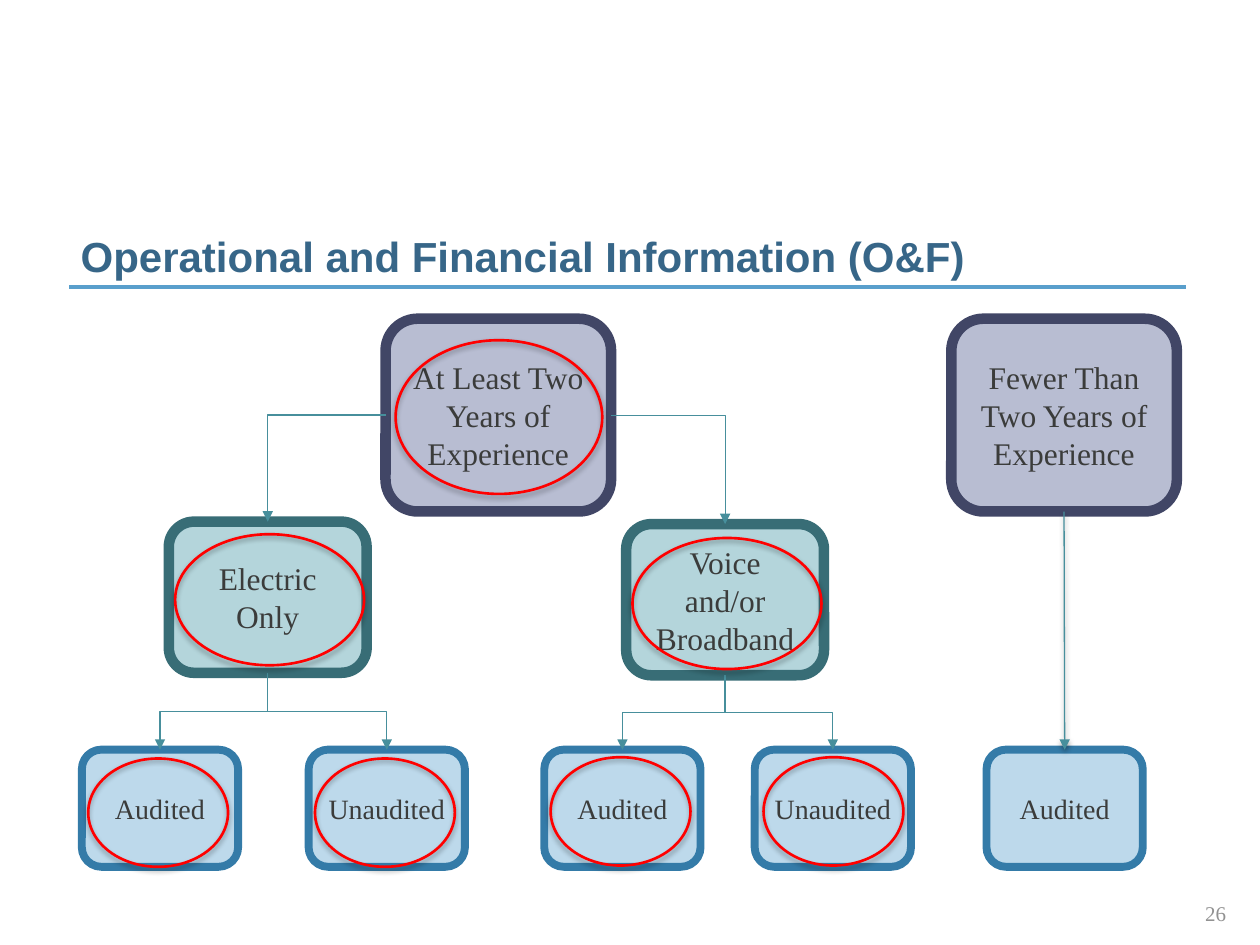
import pptx
import pptx.dml.color
import pptx.enum.shapes
import pptx.enum.text
import pptx.oxml
import pptx.oxml.ns
import pptx.util
from pptx.util import Inches

SHAPE = pptx.enum.shapes.MSO_SHAPE
CONNECTOR = pptx.enum.shapes.MSO_CONNECTOR
ALIGN = pptx.enum.text.PP_ALIGN
ANCHOR = pptx.enum.text.MSO_ANCHOR
TOP, LEFT, BOTTOM, RIGHT = range(4)
SERIF = "Times New Roman"

COLORS = {
    "title": "376688", "rule": "599FCC", "text": "3B3C3B", "number": "929292",
    "arrow": "478F9C", "highlight": "FF0000",
}
TITLE = "Operational and Financial Information (O&F)"
PAGE_NUMBER = "26"

LEVELS = {
    "experience": dict(size=(1.79, 1.53), oval=(1.64, 1.22), fill="B8BDD2",
                       border="414666", border_pt=6, font_pt=18),
    "service": dict(size=(1.57, 1.2), oval=(1.5, 1.04), fill="B4D5DB",
                    border="386D76", border_pt=6, font_pt=18),
    "audit": dict(size=(1.24, 0.93), oval=(1.11, 0.86), fill="BDD9EB",
                  border="347BA8", border_pt=4.5, font_pt=16),
}
# key: level, text, box left and top, highlight oval left and top
BOXES = {
    "two_years": ("experience", "At Least Two Years of Experience", (3.06, 2.53), (3.14, 2.7)),
    "fewer": ("experience", "Fewer Than Two Years of Experience", (7.55, 2.53), None),
    "electric": ("service", "Electric Only", (1.34, 4.14), (1.39, 4.24)),
    "voice": ("service", "Voice and/or Broadband", (4.97, 4.16), (5.02, 4.27)),
    "electric_audited": ("audit", "Audited", (0.65, 5.95), (0.7, 6.02)),
    "electric_unaudited": ("audit", "Unaudited", (2.45, 5.95), (2.5, 6.02)),
    "voice_audited": ("audit", "Audited", (4.32, 5.95), (4.37, 6.01)),
    "voice_unaudited": ("audit", "Unaudited", (5.99, 5.95), (6.06, 6.01)),
    "fewer_audited": ("audit", "Audited", (7.83, 5.95), None),
}
SIDE_ARROWS = [("two_years", LEFT, "electric"), ("two_years", RIGHT, "voice")]
FORK_ARROWS = [
    ("electric", "electric_audited"), ("electric", "electric_unaudited"),
    ("voice", "voice_audited"), ("voice", "voice_unaudited"),
]
STRAIGHT_ARROW = ("fewer", "fewer_audited")


def rgb(value):
    return pptx.dml.color.RGBColor.from_string(value)


def style_text(frame, font, points, color, align, bold=False):
    paragraph = frame.paragraphs[0]
    paragraph.alignment = align
    run_font = paragraph.runs[0].font
    run_font.name, run_font.size, run_font.bold = font, pptx.util.Pt(points), bold
    run_font.color.rgb = rgb(color)


def style_line(shape, color, points):
    shape.line.color.rgb = rgb(color)
    shape.line.width = pptx.util.Pt(points)


def set_shadow(shape, opacity=0, distance=0):
    """Give a soft downward shadow, or none when the opacity is zero."""
    properties = shape._element.spPr
    for old in properties.findall(pptx.oxml.ns.qn("a:effectLst")):
        properties.remove(old)
    shadow = (
        f'<a:outerShdw blurRad="{pptx.util.Pt(3.1)}" dist="{pptx.util.Pt(distance)}" '
        f'dir="5400000" rotWithShape="0"><a:srgbClr val="000000">'
        f'<a:alpha val="{opacity * 1000}"/></a:srgbClr></a:outerShdw>'
    ) if opacity else ""
    properties.append(pptx.oxml.parse_xml(
        f'<a:effectLst {pptx.oxml.ns.nsdecls("a")}>{shadow}</a:effectLst>'))


def add_box(slide, level, text, position):
    look = LEVELS[level]
    box = slide.shapes.add_shape(
        SHAPE.ROUNDED_RECTANGLE, *map(Inches, position + look["size"]))
    box.shadow.inherit = False
    box.fill.solid()
    box.fill.fore_color.rgb = rgb(look["fill"])
    style_line(box, look["border"], look["border_pt"])
    box.text_frame.text = text
    box.text_frame.vertical_anchor = ANCHOR.MIDDLE
    style_text(box.text_frame, SERIF, look["font_pt"], COLORS["text"], ALIGN.CENTER)
    return box


def add_oval(slide, level, position):
    oval = slide.shapes.add_shape(
        SHAPE.OVAL, *map(Inches, position + LEVELS[level]["oval"]))
    oval.fill.background()
    style_line(oval, COLORS["highlight"], 1.5)
    set_shadow(oval, opacity=35, distance=1.8)


def add_arrow(slide, kind, start, side, end):
    """Join a side of one box to the top of another with an arrow."""
    arrow = slide.shapes.add_connector(kind, 0, 0, 0, 0)
    arrow.begin_connect(start, side)
    arrow.end_connect(end, TOP)
    style_line(arrow, COLORS["arrow"], 0.75)
    arrow.line._get_or_add_ln().append(pptx.oxml.parse_xml(
        f'<a:tailEnd {pptx.oxml.ns.nsdecls("a")} type="triangle"/>'))
    set_shadow(arrow)
    return arrow


def add_side_arrow(slide, start, side, end):
    """Run sideways out of a box, then turn once and go down."""
    arrow = add_arrow(slide, CONNECTOR.ELBOW, start, side, end)
    arrow._element.spPr.find(pptx.oxml.ns.qn("a:prstGeom")).set("prst", "bentConnector2")


def add_fork_arrow(slide, start, end):
    """Go down, across and down: an elbow turned by a quarter."""
    arrow = add_arrow(slide, CONNECTOR.ELBOW, start, BOTTOM, end)
    to_right = arrow.end_x > arrow.begin_x
    left, top, width, height = arrow.left, arrow.top, arrow.width, arrow.height
    arrow.left = left + (width - height) // 2
    arrow.top = top + (height - width) // 2
    arrow.width, arrow.height = height, width
    frame = arrow._element.spPr.find(pptx.oxml.ns.qn("a:xfrm"))
    frame.set("rot", str((270 if to_right else 90) * 60000))
    frame.set("flipH", "1" if to_right else "0")
    frame.set("flipV", "0")


def main():
    deck = pptx.Presentation()
    deck.slide_width, deck.slide_height = Inches(10), Inches(7.5)
    slide = deck.slides.add_slide(deck.slide_layouts[5])

    rule = slide.shapes.add_connector(
        CONNECTOR.STRAIGHT, *map(Inches, (0.55, 2.28, 9.41, 2.28)))
    style_line(rule, COLORS["rule"], 2.25)
    set_shadow(rule)

    title = slide.shapes.title
    title.left, title.top, title.width, title.height = map(Inches, (0.54, 1.78, 8.54, 0.67))
    title.text_frame.text = TITLE
    title.text_frame.vertical_anchor = ANCHOR.TOP
    style_text(title.text_frame, "Arial", 24, COLORS["title"], ALIGN.LEFT, bold=True)

    boxes = {key: add_box(slide, level, text, position)
             for key, (level, text, position, _) in BOXES.items()}

    for start, side, end in SIDE_ARROWS:
        add_side_arrow(slide, boxes[start], side, boxes[end])
    for start, end in FORK_ARROWS:
        add_fork_arrow(slide, boxes[start], boxes[end])
    start, end = STRAIGHT_ARROW
    down = add_arrow(slide, CONNECTOR.STRAIGHT, boxes[start], BOTTOM, boxes[end])
    set_shadow(down, opacity=38, distance=1.6)

    for level, _, _, oval_position in BOXES.values():
        if oval_position:
            add_oval(slide, level, oval_position)

    number = slide.shapes.add_textbox(*map(Inches, (7.58, 7.05, 2.25, 0.4)))
    number.text_frame.word_wrap = True
    number.text_frame.text = PAGE_NUMBER
    number.text_frame.vertical_anchor = ANCHOR.MIDDLE
    style_text(number.text_frame, SERIF, 12, COLORS["number"], ALIGN.RIGHT)

    deck.save("out.pptx")


if __name__ == "__main__":
    main()
